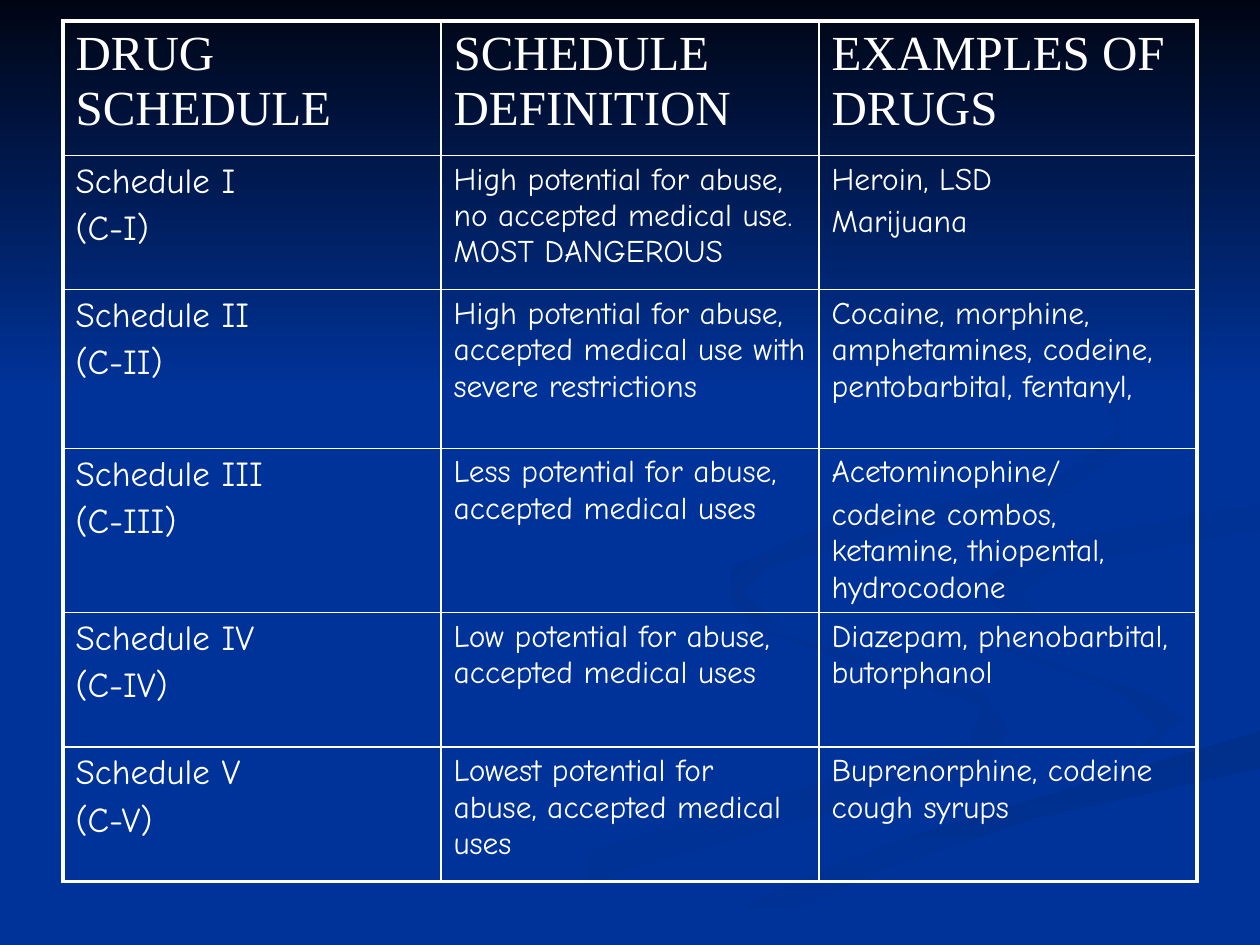
from lxml import etree
from pptx import Presentation
from pptx.dml.color import RGBColor
from pptx.oxml.ns import qn
from pptx.util import Pt

BLUE, WHITE = "003399", "FFFFFF"
HEAD = {"size": Pt(28), "name": "Times New Roman"}
SCHEDULE = {"size": Pt(20), "name": "Comic Neue"}
DETAIL = {"size": Pt(18), "name": "Comic Neue"}
COL_WIDTH = 216
ROW_HEIGHTS = [76.8, 76.8, 90.6, 93.6, 76.8, 76.8]
GRID_UNIT = Pt(7.2)  # ribbon outlines lie on a grid of 100 by 75 units

ROWS = [
    ("DRUG\nSCHEDULE", "SCHEDULE\nDEFINITION", "EXAMPLES OF\nDRUGS"),
    ("I", "High potential for abuse, no accepted medical use. MOST DANGEROUS",
     ["Heroin, LSD", "Marijuana"]),
    ("II", "High potential for abuse, accepted medical use with severe restrictions",
     ["Cocaine, morphine, amphetamines, codeine, pentobarbital, fentanyl,"]),
    ("III", "Less potential for abuse, accepted medical uses",
     ["Acetominophine/", "codeine combos, ketamine, thiopental, hydrocodone"]),
    ("IV", "Low potential for abuse, accepted medical uses",
     ["Diazepam, phenobarbital, butorphanol"]),
    ("V", "Lowest potential for abuse, accepted medical uses",
     ["Buprenorphine, codeine cough syrups"]),
]

# Each ribbon: gradient start, gradient end, clockwise angle, outline
RIBBONS = [
    (BLUE, "003193", 0, [
        (78, 55), (61, 50), (57, 46), (60, 50), (78, 56), (77, 59),
        (58, 64), (42, 69), (30, 75), (36, 75), (50, 69), (78, 61), (80, 58)]),
    (BLUE, "003193", 45, [
        (94, 57), (90, 54), (76, 50), (72, 46), (75, 50), (89, 55), (92, 58), (89, 61)]),
    ("002F8C", BLUE, 90, [
        (50, 75), (57, 75), (70, 69), (82, 65), (100, 61), (100, 58), (76, 65), (60, 71)]),
    (BLUE, BLUE, 0, [
        (72, 46), (76, 50), (91, 55), (94, 57), (91, 60), (66, 67), (48, 75),
        (52, 75), (70, 67), (100, 58), (100, 54), (83, 50), (78, 46), (83, 43),
        (100, 40), (100, 39), (79, 42)]),
    ("003091", BLUE, 45, [
        (78, 46), (79, 48), (83, 50), (81, 47), (84, 45), (100, 42), (100, 40), (83, 43)]),
    ("002F8E", BLUE, 45, [
        (68, 43), (83, 40), (89, 36), (89, 31), (76, 23), (85, 28), (89, 34),
        (84, 38), (65, 42), (58, 45), (58, 48), (62, 50), (59, 47), (61, 45)]),
    ("000514", BLUE, 90, [(0, 0), (0, 31), (100, 31), (100, 0)]),
]


def rgb(value):
    return RGBColor.from_string(value)


def add_ribbon(slide, start, end, angle, points):
    builder = slide.shapes.build_freeform(*points[0], scale=GRID_UNIT)
    builder.add_line_segments(points[1:], close=True)
    s = builder.convert_to_shape()
    s.shadow.inherit = False
    s.line.fill.background()
    if start == end:
        s.fill.solid()
        s.fill.fore_color.rgb = rgb(start)
        return
    s.fill.gradient()
    s.fill.gradient_angle = -angle % 360
    for stop, color in zip(s.fill.gradient_stops, (start, end)):
        stop.color.rgb = rgb(color)


def set_borders(cell, widths):
    """Draw white borders; widths maps L, R, T and B to points."""
    tc_pr = cell._tc.get_or_add_tcPr()
    for i, (side, width) in enumerate(widths.items()):
        ln = etree.Element(qn(f"a:ln{side}"), w=str(Pt(width)))
        fill = etree.SubElement(ln, qn("a:solidFill"))
        etree.SubElement(fill, qn("a:srgbClr"), val=WHITE)
        tc_pr.insert(i, ln)


def fill_cell(cell, lines, font):
    cell.fill.background()
    tf = cell.text_frame
    for i, line in enumerate(lines):
        p = tf.add_paragraph() if i else tf.paragraphs[0]
        p.text = line.replace("\n", "\v")
        p.space_before = Pt(font["size"].pt * 0.2)
        for r in p.runs:
            r.font.color.rgb = rgb(WHITE)
            for key, value in font.items():
                setattr(r.font, key, value)


def add_schedule_table(slide):
    last_row, last_col = len(ROWS) - 1, 2
    table = slide.shapes.add_table(
        len(ROWS), 3, Pt(36), Pt(12), Pt(3 * COL_WIDTH), Pt(sum(ROW_HEIGHTS))).table
    table.first_row = table.horz_banding = False
    for column in table.columns:
        column.width = Pt(COL_WIDTH)
    for row, height in zip(table.rows, ROW_HEIGHTS):
        row.height = Pt(height)
    for i, (first, definition, examples) in enumerate(ROWS):
        if i == 0:
            cells = [([text], HEAD) for text in ROWS[0]]
        else:
            cells = [([f"Schedule {first}", f"(C-{first})"], SCHEDULE),
                     ([definition], DETAIL), (examples, DETAIL)]
        for j, (lines, font) in enumerate(cells):
            cell = table.cell(i, j)
            fill_cell(cell, lines, font)
            outer = {"L": j == 0, "R": j == last_col, "T": i == 0, "B": i == last_row}
            set_borders(cell, {k: 2.25 if v else 1 for k, v in outer.items()})


def main():
    prs = Presentation()
    prs.slide_width, prs.slide_height = Pt(720), Pt(540)
    slide = prs.slides.add_slide(prs.slide_layouts[6])
    background = slide.background.fill
    background.solid()
    background.fore_color.rgb = rgb(BLUE)
    for ribbon in RIBBONS:
        add_ribbon(slide, *ribbon)
    add_schedule_table(slide)
    prs.save("out.pptx")


if __name__ == "__main__":
    main()
